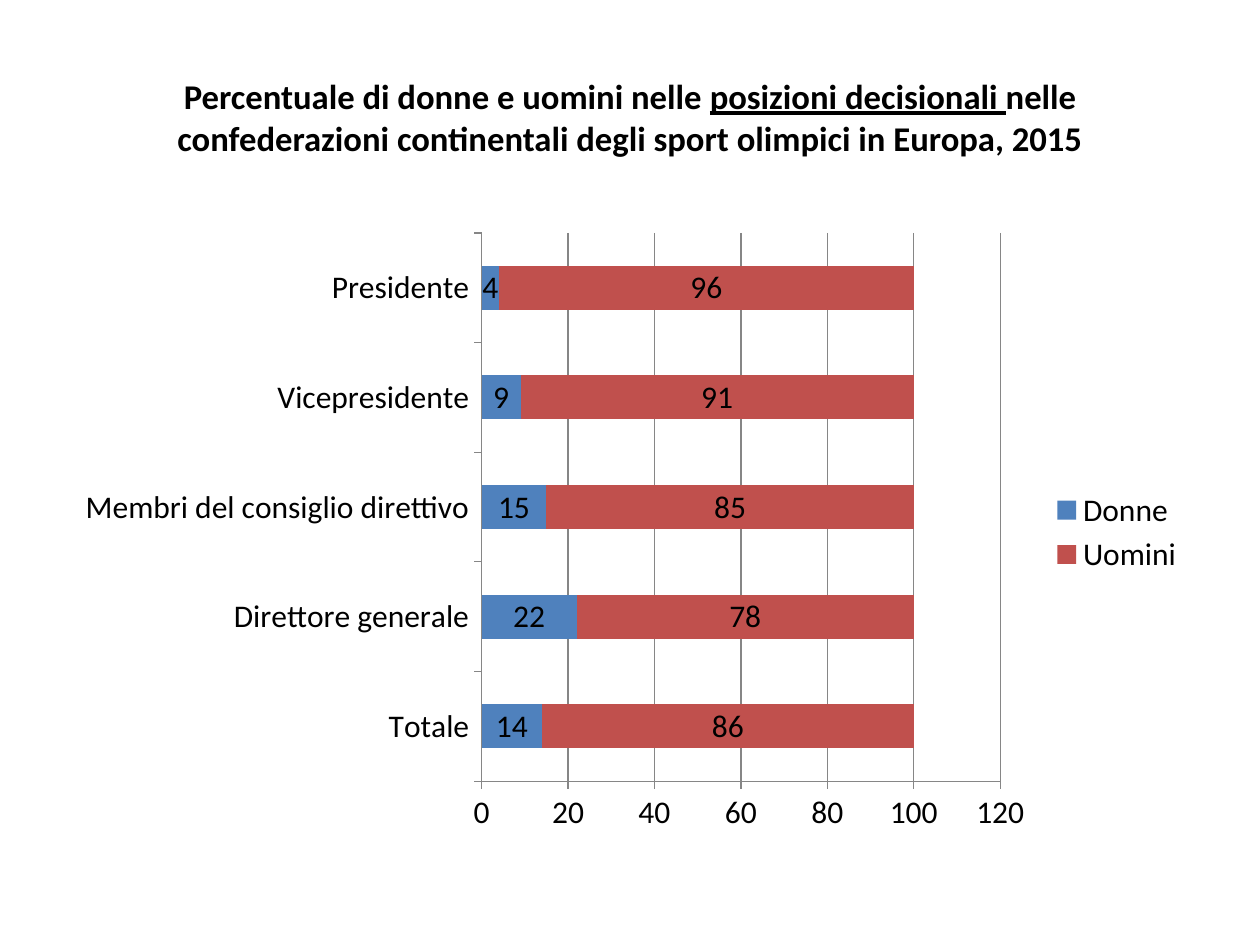
from typing import NamedTuple

import pptx
import pptx.chart.data
import pptx.dml.color
import pptx.enum.chart
import pptx.enum.text
import pptx.util

Pt = pptx.util.Pt
FONT = "Calibri"
COLORS = {"text": "000000", "line": "868686", "women": "4F81BD", "men": "C0504D"}


class TitleRun(NamedTuple):
    text: str
    underline: bool = False


class Series(NamedTuple):
    name: str
    values: tuple[int, ...]
    color: str


TITLE_RUNS = (
    TitleRun("Percentuale di donne e uomini nelle "),
    TitleRun("posizioni decisionali ", underline=True),
    TitleRun("nelle confederazioni continentali degli sport olimpici in Europa, 2015"),
)
CATEGORIES = (
    "Totale",
    "Direttore generale",
    "Membri del consiglio direttivo",
    "Vicepresidente",
    "Presidente",
)
SERIES = (
    Series("Donne", (14, 22, 15, 9, 4), "women"),
    Series("Uomini", (86, 78, 85, 91, 96), "men"),
)


def rgb(name: str) -> pptx.dml.color.RGBColor:
    return pptx.dml.color.RGBColor.from_string(COLORS[name])


def format_font(font, size: float) -> None:
    font.name = FONT
    font.size = Pt(size)
    font.color.rgb = rgb("text")


def format_line(line) -> None:
    line.color.rgb = rgb("line")
    line.width = Pt(0.75)


def add_title(slide) -> None:
    title = slide.shapes.title
    title.left, title.top, title.width, title.height = Pt(36), Pt(21.6), Pt(648), Pt(90)
    frame = title.text_frame
    frame.word_wrap = True
    frame.auto_size = pptx.enum.text.MSO_AUTO_SIZE.NONE
    frame.vertical_anchor = pptx.enum.text.MSO_ANCHOR.MIDDLE
    frame.margin_left = frame.margin_right = Pt(36)
    paragraph = frame.paragraphs[0]
    paragraph.alignment = pptx.enum.text.PP_ALIGN.CENTER
    for title_run in TITLE_RUNS:
        run = paragraph.add_run()
        run.text = title_run.text
        format_font(run.font, 19.8)
        run.font.bold = True
        run.font.underline = title_run.underline


def add_positions_chart(slide) -> None:
    data = pptx.chart.data.CategoryChartData(number_format="General")
    data.categories = CATEGORIES
    for series in SERIES:
        data.add_series(series.name, series.values)
    chart = slide.shapes.add_chart(
        pptx.enum.chart.XL_CHART_TYPE.BAR_STACKED,
        Pt(36), Pt(126), Pt(648), Pt(356.4), data,
    ).chart
    chart.has_title = False
    format_font(chart.font, 18)

    # Bars and their values
    plot = chart.plots[0]
    plot.gap_width = 150
    plot.overlap = 100
    plot.vary_by_categories = False
    for chart_series, series in zip(plot.series, SERIES):
        chart_series.format.fill.solid()
        chart_series.format.fill.fore_color.rgb = rgb(series.color)
        labels = chart_series.data_labels
        labels.show_value = True
        labels.position = pptx.enum.chart.XL_LABEL_POSITION.CENTER
        format_font(labels.font, 18)

    # Axes and gridlines
    for axis in (chart.category_axis, chart.value_axis):
        axis.major_tick_mark = pptx.enum.chart.XL_TICK_MARK.OUTSIDE
        axis.minor_tick_mark = pptx.enum.chart.XL_TICK_MARK.NONE
        format_line(axis.format.line)
        format_font(axis.tick_labels.font, 18)
    chart.category_axis.has_major_gridlines = False
    value_axis = chart.value_axis
    value_axis.minimum_scale, value_axis.maximum_scale = 0, 120
    value_axis.major_unit = 20
    value_axis.has_major_gridlines = True
    format_line(value_axis.major_gridlines.format.line)

    # Legend
    chart.has_legend = True
    chart.legend.position = pptx.enum.chart.XL_LEGEND_POSITION.RIGHT
    chart.legend.include_in_layout = False
    format_font(chart.legend.font, 18)


def main() -> None:
    presentation = pptx.Presentation()
    presentation.slide_width, presentation.slide_height = Pt(720), Pt(540)
    title_only = presentation.slide_layouts[5]
    slide = presentation.slides.add_slide(title_only)
    add_title(slide)
    add_positions_chart(slide)
    presentation.save("out.pptx")


if __name__ == "__main__":
    main()
